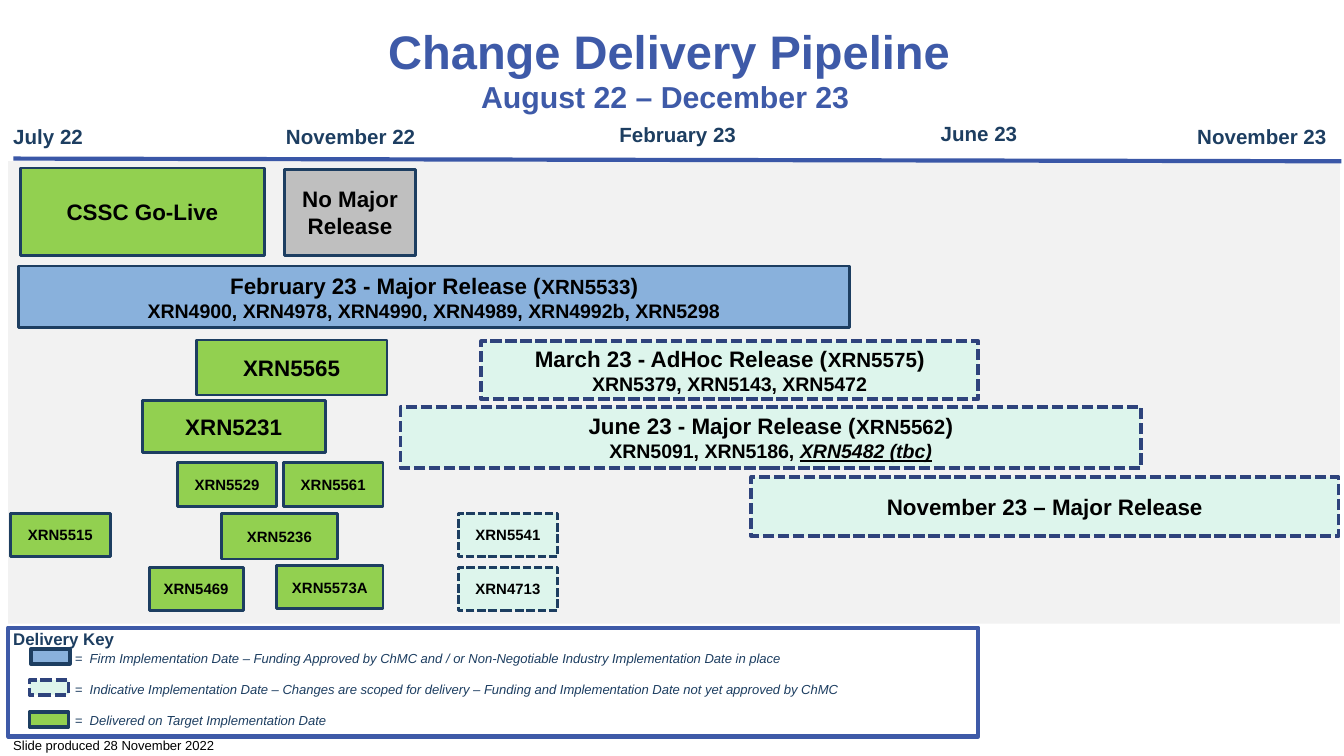
from pptx import Presentation
from pptx.dml.color import RGBColor
from pptx.enum.dml import MSO_LINE
from pptx.enum.shapes import MSO_CONNECTOR, MSO_SHAPE
from pptx.enum.text import MSO_ANCHOR, PP_ALIGN
from pptx.oxml.ns import qn
from pptx.util import Inches, Pt
from lxml.etree import SubElement

BLACK = RGBColor(0x00, 0x00, 0x00)
NAVY = RGBColor(0x1D, 0x3E, 0x61)
INDIGO = RGBColor(0x2E, 0x43, 0x7C)
BLUE = RGBColor(0x3E, 0x5A, 0xA8)
AXIS = RGBColor(0x3A, 0x57, 0xA7)
SKY = RGBColor(0x89, 0xB1, 0xDC)
GREEN = RGBColor(0x92, 0xD0, 0x50)
MINT = RGBColor(0xDD, 0xF5, 0xEC)
GREY = RGBColor(0xBF, 0xBF, 0xBF)
PALE = RGBColor(0xF2, 0xF2, 0xF2)

DASH = MSO_LINE.SQUARE_DOT
BIG = {"size": Pt(12), "bold": True}
MID = {"size": Pt(11), "bold": True}
LIST = {"size": Pt(10.5), "bold": True}
SMALL = {"size": Pt(8), "bold": True}
OPEN = {"size": Pt(10.5), "bold": True, "italic": True, "underline": True}
NOTE = {"size": Pt(7), "italic": True}

DONE = (GREEN, NAVY, 1.5, None)
FIRM = (SKY, NAVY, 1.5, None)
NONE = (GREY, NAVY, 1.5, None)
PLAN = (MINT, INDIGO, 2, DASH)
MINOR = (MINT, NAVY, 1.5, DASH)


def apply(item, form):
    """Set each attribute of a format dict on an item."""
    for name, value in form.items():
        setattr(item, name, value)


def write(frame, lines, color, align=PP_ALIGN.LEFT):
    """Fill a text frame with lines made of (text, format) runs."""
    for i, line in enumerate(lines):
        para = frame.paragraphs[0] if i == 0 else frame.add_paragraph()
        para.alignment = align
        for text, form in line:
            run = para.add_run()
            run.text = text.rstrip("\n")
            apply(run.font, {"name": "Arial", **form})
            run.font.color.rgb = color
            if text.endswith("\n"):
                para.add_line_break()


def label(slide, box, lines, color, wrap=False, align=PP_ALIGN.LEFT):
    """Add a text box and return its frame."""
    frame = slide.shapes.add_textbox(*map(Inches, box)).text_frame
    frame.word_wrap = wrap
    write(frame, lines, color, align)
    return frame


def block(slide, box, look, lines=()):
    """Add a rectangle with centred lines of text."""
    fill, edge, width, dash = look
    shape = slide.shapes.add_shape(MSO_SHAPE.RECTANGLE, *map(Inches, box))
    shape.shadow.inherit = False
    if fill is None:
        shape.fill.background()
    else:
        shape.fill.solid()
        shape.fill.fore_color.rgb = fill
    if edge is None:
        shape.line.fill.background()
    else:
        shape.line.color.rgb = edge
        apply(shape.line, {"width": Pt(width), "dash_style": dash})
    apply(shape.text_frame, {"word_wrap": True, "vertical_anchor": MSO_ANCHOR.MIDDLE})
    write(shape.text_frame, lines, BLACK, PP_ALIGN.CENTER)


def header(slide, box):
    """Place the title and the period under it."""
    line = [
        ("Change Delivery Pipeline\n", {"size": Pt(25.2), "bold": True}),
        ("August 22 – December 23 ", {"size": Pt(16.2), "bold": True}),
    ]
    frame = label(slide, box, [line], BLUE, True, PP_ALIGN.CENTER)
    frame.vertical_anchor = MSO_ANCHOR.MIDDLE


def axis(slide, box):
    """Place the month labels above the time line."""
    left, top, width, height = box
    months = [
        ("July 22", 0, 0.02, 0.72),
        ("November 22", 2.03, 0.02, 1.17),
        ("February 23", 4.51, 0.01, 1.08),
        ("June 23", 6.9, 0, 0.78),
        ("November 23", 8.81, 0.02, 1.17),
    ]
    for text, x, y, w in months:
        label(slide, (left + x, top + y, w, 0.29), [[(text, MID)]], NAVY)
    base = top + height
    ends = (left + 0.1, base - 0.02, left + width - 0.02, base)
    line = slide.shapes.add_connector(MSO_CONNECTOR.STRAIGHT, *map(Inches, ends))
    line.line.color.rgb = AXIS
    line.line.width = Pt(2.25)
    SubElement(line._element.spPr, qn("a:effectLst"))


def release(name, code, *items):
    """Return the two lines of a release with its changes."""
    return [[(name + " Release (", BIG), (code, MID), (")", BIG)], list(items)]


def board(slide, box):
    """Place the releases and changes on the pale board."""
    left, top = box[:2]
    block(slide, box, (PALE, None, 0, None))
    feb = release("February 23 - Major", "XRN5533",
                  ("XRN4900, XRN4978, XRN4990, XRN4989, XRN4992b, XRN5298", LIST))
    march = release("March 23 - AdHoc", "XRN5575", ("XRN5379, XRN5143, XRN5472", LIST))
    june = release("June 23 - Major", "XRN5562",
                   ("XRN5091, XRN5186, ", LIST), ("XRN5482 (tbc)", OPEN))
    parts = [
        (0.09, 0.05, 1.82, 0.65, DONE, [[("CSSC Go-Live", BIG)]]),
        (2.06, 0.06, 0.97, 0.64, NONE, [[("No Major Release", BIG)]]),
        (0.08, 0.78, 6.18, 0.46, FIRM, feb),
        (1.4, 1.33, 1.42, 0.41, DONE, [[("XRN5565", BIG)]]),
        (3.52, 1.34, 3.7, 0.43, PLAN, march),
        (1, 1.78, 1.36, 0.39, DONE, [[("XRN5231", BIG)]]),
        (2.92, 1.83, 5.51, 0.45, PLAN, june),
        (5.53, 2.35, 4.37, 0.44, PLAN, [[("November 23 – Major Release", BIG)]]),
    ]
    minor = [
        ("XRN5529", 1.26, 2.24, 0.74, 0.33, DONE),
        ("XRN5561", 2.05, 2.24, 0.74, 0.33, DONE),
        ("XRN5515", 0.02, 2.62, 0.74, 0.32, DONE),
        ("XRN5236", 1.59, 2.62, 0.86, 0.34, DONE),
        ("XRN5541", 3.35, 2.62, 0.74, 0.32, MINOR),
        ("XRN5469", 1.05, 3.02, 0.7, 0.32, DONE),
        ("XRN5573A", 2, 3.01, 0.79, 0.32, DONE),
        ("XRN4713", 3.35, 3.02, 0.74, 0.32, MINOR),
    ]
    parts += [(*spot, [[(code, SMALL)]]) for code, *spot in minor]
    for x, y, w, h, look, lines in parts:
        block(slide, (left + x, top + y, w, h), look, lines)


def legend(slide, box):
    """Place the delivery key with a swatch for each status."""
    left, top = box[:2]
    block(slide, box, (None, BLUE, 2.25, None))
    title = [[("Delivery Key", {"size": Pt(9), "bold": True})]]
    label(slide, (left - 0.06, top - 0.04, 2.13, 0.29), title, NAVY)
    rows = [
        (0.17, 0.16, SKY, NAVY, None, "Firm Implementation Date – Funding Approved by ChMC "
         "and / or Non-Negotiable Industry Implementation Date in place"),
        (0.16, 0.39, MINT, INDIGO, DASH, "Indicative Implementation Date – Changes are scoped "
         "for delivery – Funding and Implementation Date not yet approved by ChMC"),
        (0.16, 0.63, GREEN, NAVY, None, "Delivered on Target Implementation Date"),
    ]
    for x, y, fill, edge, dash, text in rows:
        block(slide, (left + x, top + y, 0.29, 0.11), (fill, edge, 2, dash))
    lines = [[("=\t" + row[-1], NOTE)] for row in rows]
    frame = label(slide, (left + 0.4, top + 0.12, 6.8, 0.67), lines, NAVY, True)
    for i, para in enumerate(frame.paragraphs):
        tabs = SubElement(para._p.get_or_add_pPr(), qn("a:tabLst"))
        SubElement(tabs, qn("a:tab"), pos=str(Inches(0.11)), algn="l")
        para.space_before = Pt(8.3 if i else 0)


def main():
    """Build the pipeline slide."""
    deck = Presentation()
    wide = Inches(10)
    apply(deck, {"slide_width": wide, "slide_height": wide * 9 // 16})
    slide = deck.slides.add_slide(deck.slide_layouts[6])
    header(slide, (-0.02, 0.16, 10, 0.7))
    board(slide, (0.06, 1.2, 9.91, 3.44))
    axis(slide, (0, 0.85, 10, 0.35))
    legend(slide, (0.06, 4.67, 7.22, 0.81))
    note = [[("Slide produced 28 November 2022", {"size": Pt(7)})]]
    label(slide, (0, 5.44, 1.75, 0.22), note, BLACK)
    deck.save("out.pptx")


if __name__ == "__main__":
    main()
